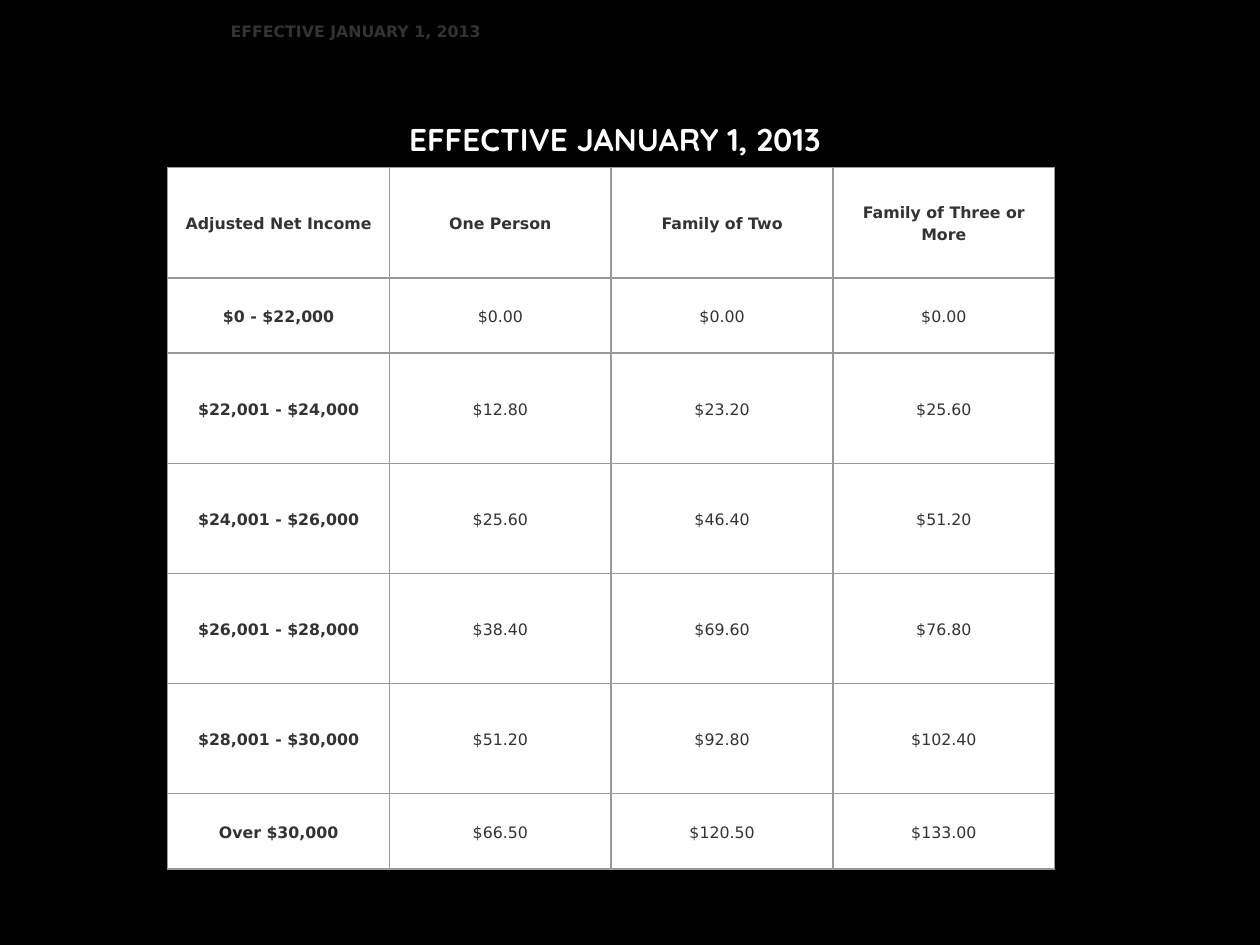
from dataclasses import dataclass

from lxml import etree
from pptx import Presentation
from pptx import util as u
from pptx.dml.color import RGBColor
from pptx.enum import text
from pptx.oxml import ns


@dataclass(frozen=True)
class Theme:
    background: RGBColor = RGBColor(0x00, 0x00, 0x00)
    paper: RGBColor = RGBColor(0xFF, 0xFF, 0xFF)
    ink: RGBColor = RGBColor(0x33, 0x33, 0x33)
    border: RGBColor = RGBColor(0x99, 0x99, 0x99)
    title_font: str = "Quicksand"
    body_font: str = "DejaVu Sans"
    title_size: u.Pt = u.Pt(18)
    body_size: u.Pt = u.Pt(9)
    border_width: u.Pt = u.Pt(1)


@dataclass(frozen=True)
class Bracket:
    income: str
    one_person: str
    family_of_two: str
    family_of_three: str

    def cells(self) -> tuple[str, ...]:
        return self.income, self.one_person, self.family_of_two, self.family_of_three


THEME = Theme()
EFFECTIVE_DATE = "EFFECTIVE JANUARY 1, 2013"
HEADINGS = ("Adjusted Net Income", "One Person", "Family of Two", "Family of Three or More")
BRACKETS = (
    Bracket("$0 - $22,000", "$0.00", "$0.00", "$0.00"),
    Bracket("$22,001 - $24,000", "$12.80", "$23.20", "$25.60"),
    Bracket("$24,001 - $26,000", "$25.60", "$46.40", "$51.20"),
    Bracket("$26,001 - $28,000", "$38.40", "$69.60", "$76.80"),
    Bracket("$28,001 - $30,000", "$51.20", "$92.80", "$102.40"),
    Bracket("Over $30,000", "$66.50", "$120.50", "$133.00"),
)
COLUMN_WIDTH = u.Cm(4.47)
TALL_ROW, SHORT_ROW = u.Cm(2.22), u.Cm(1.52)
SHORT_ROWS = (1, len(BRACKETS))
CELL_MARGIN = u.Cm(0.25)


def style_font(para, name: str, size: u.Pt, color: RGBColor, bold: bool) -> None:
    font = para.font
    font.name, font.size, font.bold = name, size, bold
    font.color.rgb = color


def add_borders(cell) -> None:
    properties = cell._tc.get_or_add_tcPr()
    for index, side in enumerate(("lnL", "lnR", "lnT", "lnB")):
        line = etree.Element(ns.qn(f"a:{side}"), w=str(THEME.border_width))
        fill = etree.SubElement(line, ns.qn("a:solidFill"))
        etree.SubElement(fill, ns.qn("a:srgbClr"), val=str(THEME.border))
        properties.insert(index, line)


def fill_cell(cell, wording: str, bold: bool) -> None:
    cell.text = wording
    cell.vertical_anchor = text.MSO_ANCHOR.MIDDLE
    cell.margin_left = cell.margin_right = CELL_MARGIN
    cell.margin_top = cell.margin_bottom = CELL_MARGIN
    cell.fill.solid()
    cell.fill.fore_color.rgb = THEME.paper
    para = cell.text_frame.paragraphs[0]
    para.alignment = text.PP_ALIGN.CENTER
    para.line_spacing = 1.15
    para.space_after = u.Pt(10)
    style_font(para, THEME.body_font, THEME.body_size, THEME.ink, bold)
    add_borders(cell)


def add_rate_table(slide) -> None:
    rows = [HEADINGS, *(bracket.cells() for bracket in BRACKETS)]
    heights = [SHORT_ROW if index in SHORT_ROWS else TALL_ROW for index in range(len(rows))]
    table = slide.shapes.add_table(
        len(rows), len(HEADINGS), u.Cm(3.38), u.Cm(3.38),
        COLUMN_WIDTH * len(HEADINGS), sum(heights),
    ).table
    for column in table.columns:
        column.width = COLUMN_WIDTH
    for row_index, (wordings, height) in enumerate(zip(rows, heights)):
        table.rows[row_index].height = height
        for column_index, wording in enumerate(wordings):
            is_heading = row_index == 0 or column_index == 0
            fill_cell(table.cell(row_index, column_index), wording, is_heading)


def add_header(slide, width: int) -> None:
    box = slide.shapes.add_textbox(0, 0, width, u.Cm(1.27))
    frame = box.text_frame
    frame.word_wrap = True
    frame.vertical_anchor = text.MSO_ANCHOR.MIDDLE
    frame.margin_left = u.Cm(4.65)
    para = frame.paragraphs[0]
    para.text = EFFECTIVE_DATE
    style_font(para, THEME.body_font, THEME.body_size, THEME.ink, True)


def set_title(slide) -> None:
    title = slide.shapes.title
    title.left, title.top = u.Cm(7.62), u.Cm(2.29)
    title.width, title.height = u.Cm(9.55), u.Cm(1.02)
    frame = title.text_frame
    frame.word_wrap = True
    frame.auto_size = text.MSO_AUTO_SIZE.SHAPE_TO_FIT_TEXT
    frame.vertical_anchor = text.MSO_ANCHOR.TOP
    para = frame.paragraphs[0]
    para.text = EFFECTIVE_DATE
    para.alignment = text.PP_ALIGN.CENTER
    style_font(para, THEME.title_font, THEME.title_size, THEME.paper, True)


def main() -> None:
    deck = Presentation()
    deck.slide_width, deck.slide_height = u.Cm(25.4), u.Cm(19.05)
    slide = deck.slides.add_slide(deck.slide_layouts.get_by_name("Title Only"))
    slide.background.fill.solid()
    slide.background.fill.fore_color.rgb = THEME.background
    add_rate_table(slide)
    add_header(slide, deck.slide_width)
    set_title(slide)
    deck.save("out.pptx")


if __name__ == "__main__":
    main()
